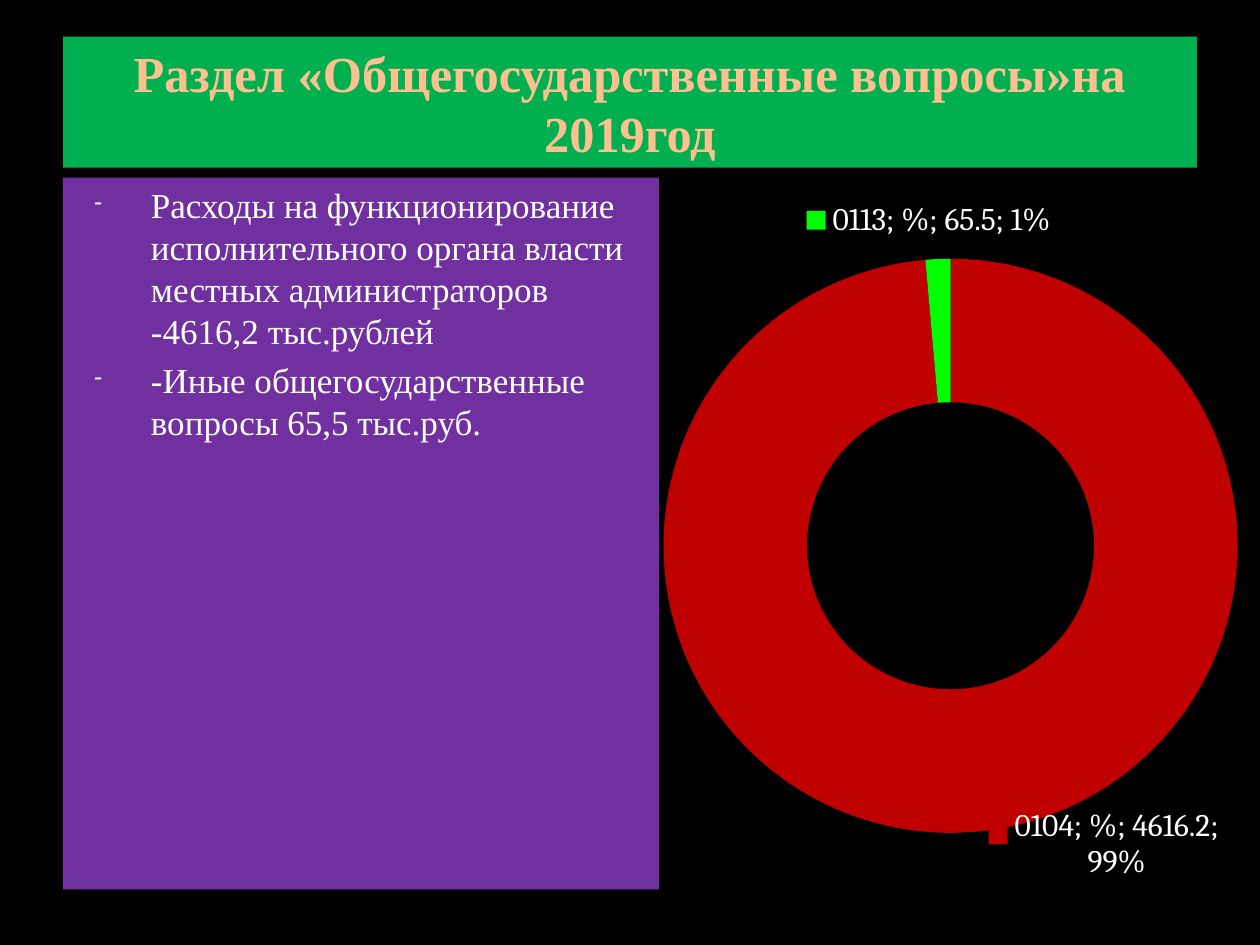
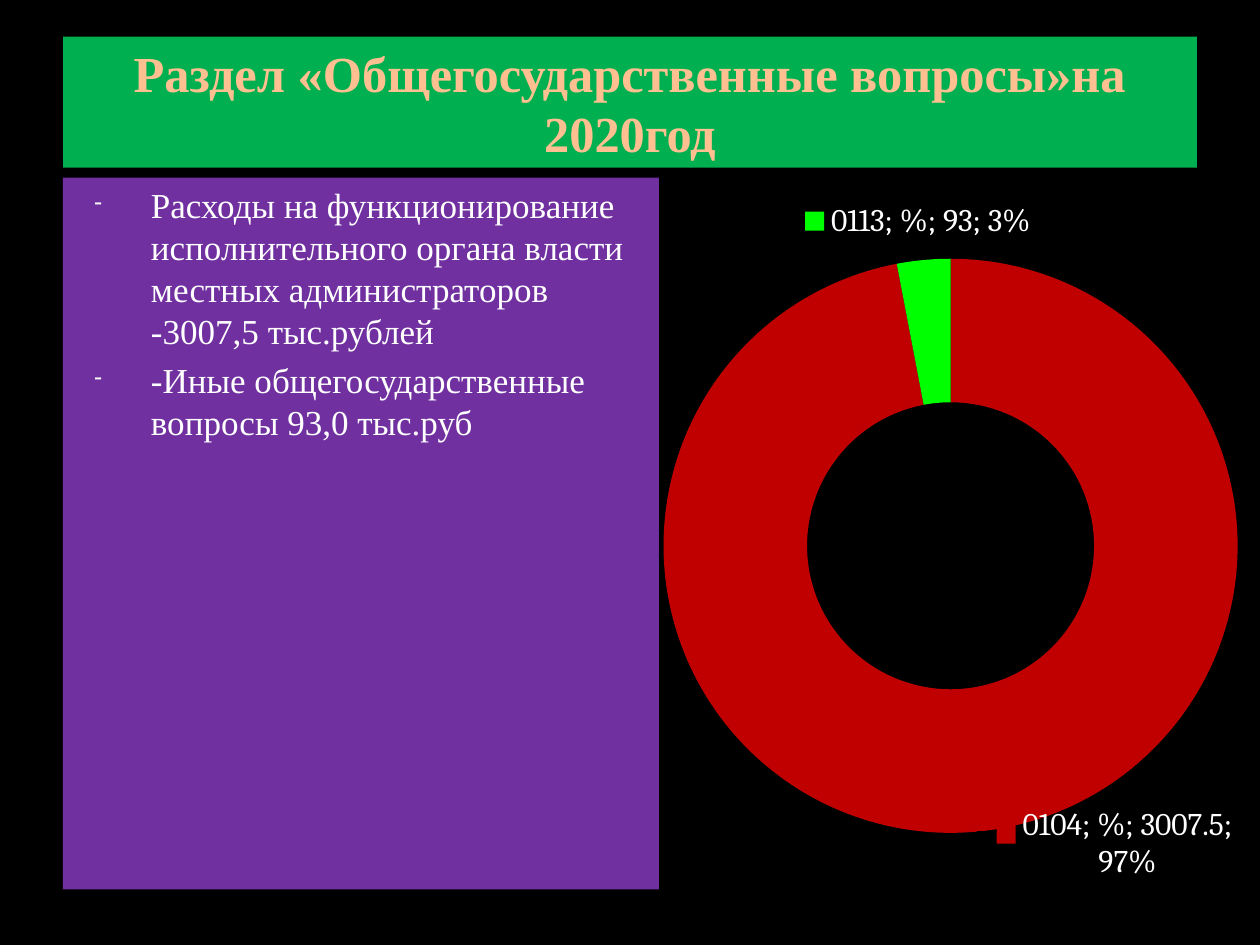
import pptx
import pptx.chart.data
import pptx.dml.color
import pptx.enum.chart
import pptx.enum.text
import pptx.oxml
import pptx.oxml.ns
import pptx.util

Inches = pptx.util.Inches
Pt = pptx.util.Pt

COLORS = {
    "background": "000000",
    "title_band": "00B050",
    "title_text": "FFC091",
    "panel": "7030A0",
    "text": "FFFFFF",
    "bullet": "F9F9F9",
    "administration": "C00000",
    "other": "00FF00",
}
TEXT_FONT = "Times New Roman"
CHART_FONT = "Cambria"
TITLE_BOX = (0.5, 0.29, 9, 1.04)
PANEL_BOX = (0.5, 1.41, 4.73, 5.65)
CHART_BOX = (5.04, 1.56, 4.96, 5.49)
PLOT_AREA = {"x": 0.01, "y": 0.09, "w": 0.99, "h": 0.83}
LABEL_OFFSETS = [{"x": 0.23, "y": 0.12}, {"x": -0.02, "y": -0.16}]
CODES = ["0104", "0113"]
YEARS = [
    (2019, (4616.2, 65.5), ("4616,2", "65,5"), "тыс.руб."),
    (2020, (3007.5, 93), ("3007,5", "93,0"), "тыс.руб"),
]


def rgb(name):
    return pptx.dml.color.RGBColor.from_string(COLORS[name])


def fill_solid(obj, name):
    obj.fill.solid()
    obj.fill.fore_color.rgb = rgb(name)


def place(sp, box):
    sp.left, sp.top, sp.width, sp.height = map(Inches, box)


def write(p, text, *, size, color, bold=False, align=None):
    p.alignment = align
    r = p.add_run()
    r.text = text
    r.font.name = TEXT_FONT
    r.font.size = Pt(size)
    r.font.bold = bold
    r.font.color.rgb = rgb(color)


def chart_xml(xml):
    return pptx.oxml.parse_xml(xml.replace(">", f" {pptx.oxml.ns.nsdecls('c')}>", 1))


def manual_layout(values, edge=False):
    modes = '<c:layoutTarget val="inner"/><c:xMode val="edge"/><c:yMode val="edge"/>'
    parts = "".join(f'<c:{key} val="{val}"/>' for key, val in values.items())
    return f"<c:layout><c:manualLayout>{modes if edge else ''}{parts}</c:manualLayout></c:layout>"


def add_dash(p):
    pPr = p._p.get_or_add_pPr()
    pPr.set("marL", str(Inches(0.6)))
    pPr.set("indent", str(Inches(-0.45)))
    ns = pptx.oxml.ns.nsdecls("a")
    for xml in (
        f'<a:buClr {ns}><a:srgbClr val="{COLORS["bullet"]}"/></a:buClr>',
        f'<a:buSzPct {ns} val="65000"/>',
        f'<a:buChar {ns} char="-"/>',
    ):
        pPr.append(pptx.oxml.parse_xml(xml))


def add_title(s, box, text):
    sp = s.shapes.title
    place(sp, box)
    fill_solid(sp, "title_band")
    tf = sp.text_frame
    tf.word_wrap = True
    tf.vertical_anchor = pptx.enum.text.MSO_ANCHOR.MIDDLE
    write(tf.paragraphs[0], text, size=28.8, color="title_text", bold=True,
          align=pptx.enum.text.PP_ALIGN.CENTER)


def add_panel(s, box, items):
    sp = s.shapes.add_textbox(*map(Inches, box))
    fill_solid(sp, "panel")
    tf = sp.text_frame
    tf.word_wrap = True
    for i, item in enumerate(items):
        p = tf.add_paragraph() if i else tf.paragraphs[0]
        p.space_before = Pt(4)
        write(p, item, size=20, color="text")
        add_dash(p)


def label_xml():
    shown = "".join(f'<c:show{part} val="1"/>' for part in
                    ("LegendKey", "Val", "CatName", "SerName", "Percent"))
    shown += '<c:showBubbleSize val="0"/><c:separator>; </c:separator>'
    points = "".join(f'<c:dLbl><c:idx val="{i}"/>{manual_layout(offset)}{shown}</c:dLbl>'
                     for i, offset in enumerate(LABEL_OFFSETS))
    return f"<c:dLbls>{points}{shown}</c:dLbls>"


def add_doughnut(s, box, values):
    data = pptx.chart.data.CategoryChartData()
    data.categories = CODES
    data.add_series("%", values)
    chart = s.shapes.add_chart(pptx.enum.chart.XL_CHART_TYPE.DOUGHNUT,
                               *map(Inches, box), data).chart
    chart.has_legend = False
    chart.has_title = False
    chart.font.name = CHART_FONT
    chart.font.size = Pt(18)
    chart.font.color.rgb = rgb("text")
    plot = chart.plots[0]
    plot.vary_by_categories = True
    series = plot.series[0]
    for i, color in enumerate(("administration", "other")):
        fill_solid(series.points[i].format, color)
    qn = pptx.oxml.ns.qn
    for labels in list(chart._chartSpace.iter(qn("c:dLbls"))):
        labels.getparent().remove(labels)
    series._element.find(qn("c:cat")).addprevious(chart_xml(label_xml()))
    area = chart._chartSpace.chart.plotArea
    for layout in area.findall(qn("c:layout")):
        area.remove(layout)
    area.insert(0, chart_xml(manual_layout(PLOT_AREA, edge=True)))


def add_year_slide(prs, year, values, amounts, unit):
    s = prs.slides.add_slide(prs.slide_layouts[5])
    fill_solid(s.background, "background")
    add_title(s, TITLE_BOX, f"Раздел «Общегосударственные вопросы»на {year}год")
    add_panel(s, PANEL_BOX, [
        "Расходы на функционирование исполнительного органа власти "
        f"местных администраторов -{amounts[0]} тыс.рублей",
        f"-Иные общегосударственные вопросы {amounts[1]} {unit}",
    ])
    add_doughnut(s, CHART_BOX, values)


def main():
    prs = pptx.Presentation()
    prs.slide_width, prs.slide_height = Inches(10), Inches(7.5)
    for year in YEARS:
        add_year_slide(prs, *year)
    prs.save("out.pptx")


if __name__ == "__main__":
    main()
